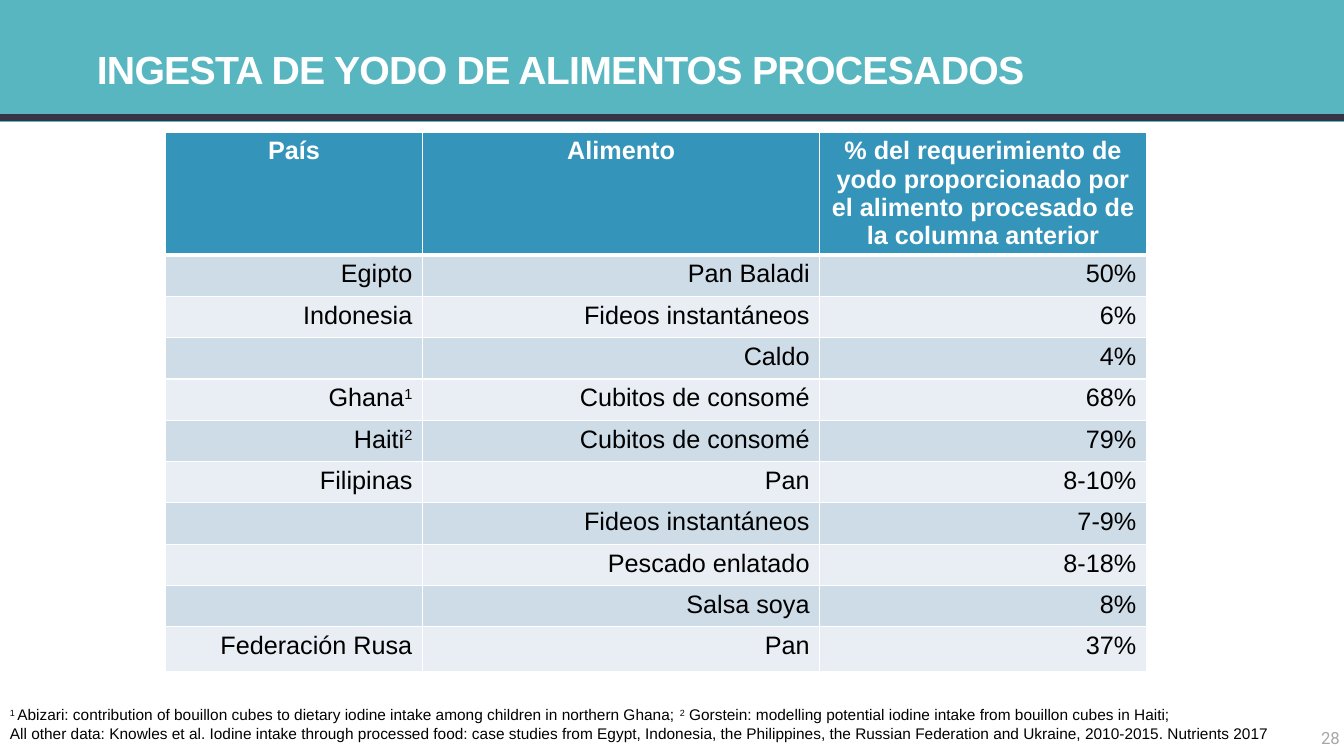
from lxml import etree
from pptx import Presentation
from pptx.dml.color import RGBColor
from pptx.enum.shapes import MSO_CONNECTOR, MSO_SHAPE
from pptx.enum.text import MSO_ANCHOR, PP_ALIGN
from pptx.oxml.ns import qn
from pptx.util import Inches, Pt

RECT, STRAIGHT = MSO_SHAPE.RECTANGLE, MSO_CONNECTOR.STRAIGHT
LEFT, CENTER, RIGHT = PP_ALIGN.LEFT, PP_ALIGN.CENTER, PP_ALIGN.RIGHT
TOP, MIDDLE, BOTTOM = MSO_ANCHOR.TOP, MSO_ANCHOR.MIDDLE, MSO_ANCHOR.BOTTOM

TEAL, NAVY, BLUE = "58B6C0", "373545", "3494BA"
BANDS = ("CEDCE7", "E8EEF3")
WHITE, BLACK, GRAY = "FFFFFF", "000000", "A7A7A7"

# Text between carets is superscript
ROWS = [
    ("País", "Alimento", "% del requerimiento de yodo proporcionado por "
     "el alimento procesado de la columna anterior"),
    ("Egipto", "Pan Baladi", "50%"),
    ("Indonesia", "Fideos instantáneos", "6%"),
    ("", "Caldo", "4%"),
    ("Ghana^1^", "Cubitos de consomé", "68%"),
    ("Haiti^2^", "Cubitos de consomé", "79%"),
    ("Filipinas", "Pan", "8-10%"),
    ("", "Fideos instantáneos", "7-9%"),
    ("", "Pescado enlatado", "8-18%"),
    ("", "Salsa soya", "8%"),
    ("Federación Rusa", "Pan", "37%"),
]
COL_WIDTHS = (2.55, 3.94, 3.24)
ROW_HEIGHTS = [1.21] + [0.41] * 9 + [0.44]
SOURCES = [
    "^1 ^Abizari: contribution of bouillon cubes to dietary iodine intake among "
    "children in northern Ghana; ^2^ Gorstein: modelling potential iodine intake "
    "from bouillon cubes in Haiti;",
    "All other data: Knowles et al. Iodine intake through processed food: case "
    "studies from Egypt, Indonesia, the Philippines, the Russian Federation and "
    "Ukraine, 2010-2015. Nutrients 2017",
]


def rgb(value):
    return RGBColor.from_string(value)


class SlideBuilder:
    def __init__(self, prs):
        self.s = prs.slides.add_slide(prs.slide_layouts[5])
        self.base = {"name": "Arial", "size": 18, "bold": False, "color": BLACK}

    def add_lines(self, tf, lines, align=LEFT, spc=None, **style):
        fmt = {**self.base, **style}
        fmt["size"] = Pt(fmt["size"])
        color = fmt.pop("color")
        for i, line in enumerate(lines):
            p = tf.add_paragraph() if i else tf.paragraphs[0]
            p.alignment = align
            for j, piece in enumerate(line.split("^")):
                if not piece:
                    continue
                r = p.add_run()
                r.text = piece
                for key, value in fmt.items():
                    setattr(r.font, key, value)
                r.font.color.rgb = rgb(color)
                if j % 2:
                    r.font._element.set("baseline", "30000")
                if spc is not None:
                    r.font._element.set("spc", str(spc))

    def frame(self, tf, anchor, wrap, insets):
        values = {"vertical_anchor": anchor, "word_wrap": wrap}
        for side, inset in zip(("left", "top", "right", "bottom"), insets):
            values[f"margin_{side}"] = Inches(inset)
        for key, value in values.items():
            setattr(tf, key, value)

    def rect(self, box, fill):
        sp = self.s.shapes.add_shape(RECT, *map(Inches, box))
        sp.shadow.inherit = False
        sp.fill.solid()
        sp.fill.fore_color.rgb = rgb(fill)
        sp.line.fill.background()

    def line(self, ends, color, width):
        cn = self.s.shapes.add_connector(STRAIGHT, *map(Inches, ends))
        cn.line.color.rgb = rgb(color)
        cn.line.width = Pt(width)
        etree.SubElement(cn._element.spPr, qn("a:effectLst"))

    def title(self, box, text, **style):
        sp = self.s.shapes.title
        sp.left, sp.top, sp.width, sp.height = map(Inches, box)
        self.frame(sp.text_frame, BOTTOM, True, (0, 0, 0, 0))
        self.add_lines(sp.text_frame, [text], **style)
        self.s.shapes._spTree.append(sp._element)  # in front of the band

    def text(self, box, lines, anchor=TOP, wrap=True,
             insets=(0.1, 0.05, 0.1, 0.05), **style):
        sp = self.s.shapes.add_textbox(*map(Inches, box))
        self.frame(sp.text_frame, anchor, wrap, insets)
        self.add_lines(sp.text_frame, lines, **style)

    def border(self, cell, side, width):
        ln = etree.SubElement(cell._tc.get_or_add_tcPr(), qn(f"a:ln{side}"),
                              w=str(Pt(width)))
        fill = etree.SubElement(ln, qn("a:solidFill"))
        etree.SubElement(fill, qn("a:srgbClr"), val=WHITE)

    def table(self, left, top, rows, widths, heights):
        box = (left, top, sum(widths), sum(heights))
        table = self.s.shapes.add_table(len(rows), len(widths),
                                        *map(Inches, box)).table
        for col, width in zip(table.columns, widths):
            col.width = Inches(width)
        for i, (row, height) in enumerate(zip(rows, heights)):
            table.rows[i].height = Inches(height)
            header = i == 0
            style = ({"align": CENTER, "bold": True, "color": WHITE}
                     if header else {"align": RIGHT})
            borders = {"L": 1, "R": 1, "T": 3 if i == 1 else 1,
                       "B": 3 if header else 1}
            for j, value in enumerate(row):
                cell = table.cell(i, j)
                for side, width in borders.items():
                    self.border(cell, side, width)
                cell.fill.solid()
                cell.fill.fore_color.rgb = rgb(BLUE if header else BANDS[(i - 1) % 2])
                self.add_lines(cell.text_frame, [value], **style)


def main():
    prs = Presentation()
    prs.slide_width, prs.slide_height = Inches(13.33), Inches(7.5)
    b = SlideBuilder(prs)

    # Header band and title
    b.rect((0, 0, 13.33, 1.21), TEAL)
    b.line((0, 1.17, 13.33, 1.17), NAVY, 5)
    b.title((0.96, 0.09, 10.41, 0.83), "INGESTA DE YODO DE ALIMENTOS PROCESADOS",
            size=28, bold=True, color=WHITE, spc=-50)

    # Iodine intake table
    b.table(1.64, 1.31, ROWS, COL_WIDTHS, ROW_HEIGHTS)

    # Sources and page number
    b.text((0, 6.95, 13.33, 0.47), SOURCES, size=11)
    b.text((13.05, 7.17, 0.29, 0.3), ["28"], anchor=MIDDLE, wrap=False,
           insets=(0.05,) * 4, align=RIGHT, name="Roboto", size=12, color=GRAY)

    prs.save("out.pptx")


if __name__ == "__main__":
    main()
